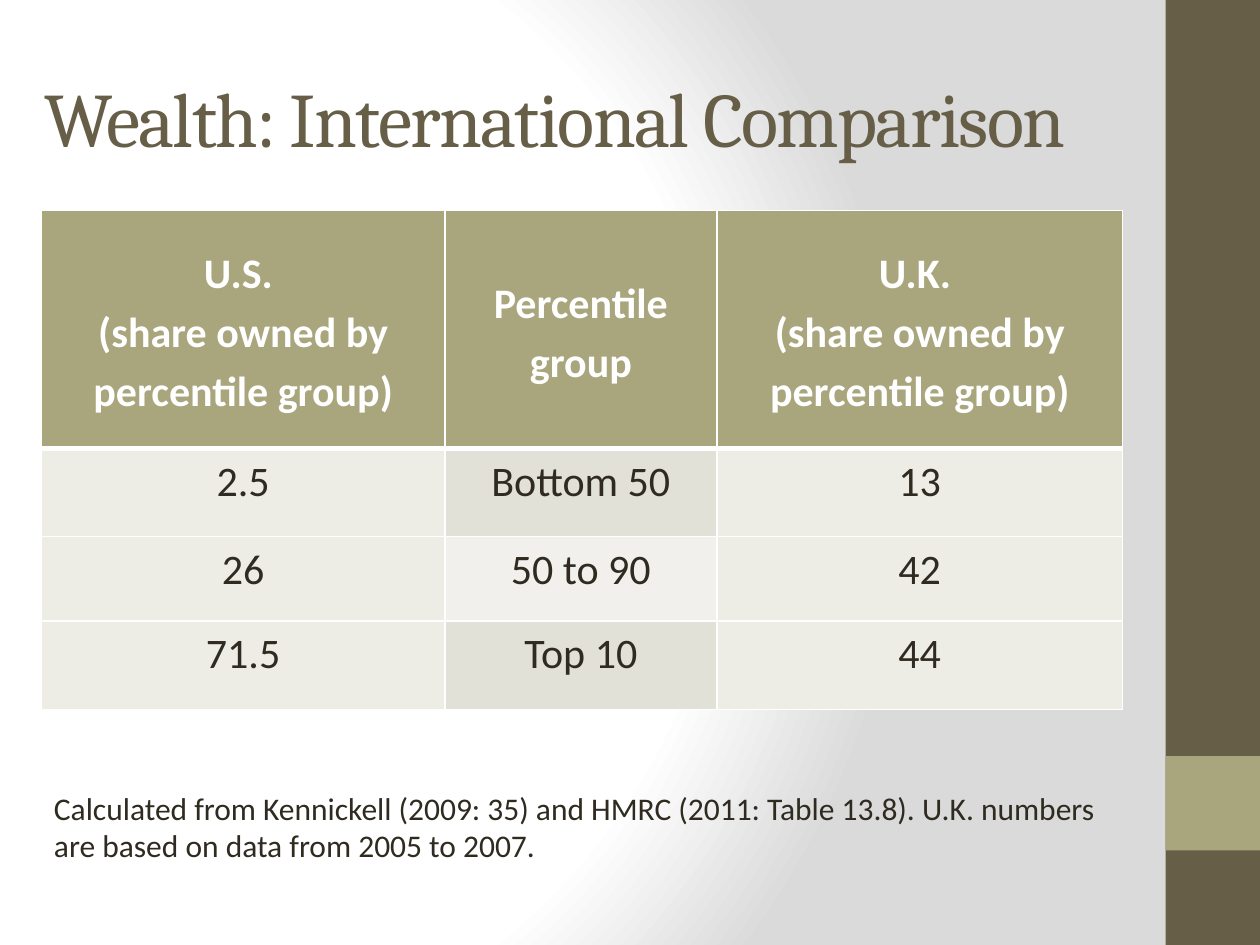
from dataclasses import dataclass

from lxml import etree
from pptx import Presentation
from pptx.dml.color import RGBColor
from pptx.enum.shapes import MSO_SHAPE
from pptx.enum.text import MSO_ANCHOR, PP_ALIGN
from pptx.oxml import parse_xml
from pptx.oxml.ns import nsdecls, qn
from pptx.util import Inches, Pt

RECTANGLE = MSO_SHAPE.RECTANGLE
TOP, MIDDLE = MSO_ANCHOR.TOP, MSO_ANCHOR.MIDDLE
LEFT, CENTER = PP_ALIGN.LEFT, PP_ALIGN.CENTER
TITLE_ONLY = 5


@dataclass(frozen=True)
class Theme:
    """Colours, fonts and type sizes of the slide."""
    brown: str = "675E47"
    olive: str = "A9A57C"
    ink: str = "2F2B20"
    white: str = "FFFFFF"
    grey: str = "DADADA"
    outer_cell: str = "EEEDE5"
    dark_band: str = "E2E1D7"
    light_band: str = "F1F0EC"
    heading_font: str = "Cambria"
    body_font: str = "Calibri"
    title_size: int = 44
    table_size: int = 24
    note_size: int = 18


class SlideBuilder:
    """Adds styled elements to the current slide."""

    def __init__(self, slide, theme):
        self.slide = slide
        self.theme = theme

    def style(self, para, size, color, font=None, bold=False, align=LEFT):
        para.alignment = align
        para.font.name = font or self.theme.body_font
        para.font.size = Pt(size)
        para.font.bold = bold
        para.font.color.rgb = RGBColor.from_string(color)

    def background(self):
        stops = ((0, self.theme.white), (75, self.theme.white), (100, self.theme.grey))
        stop_xml = "".join(
            f'<a:gs pos="{position * 1000}"><a:srgbClr val="{color}"/></a:gs>'
            for position, color in stops)
        self.slide.element.cSld.insert(0, parse_xml(
            f'<p:bg {nsdecls("p", "a")}><p:bgPr><a:gradFill rotWithShape="1">'
            f'<a:gsLst>{stop_xml}</a:gsLst><a:path path="circle">'
            '<a:fillToRect l="20000" t="50000" r="100000" b="50000"/></a:path>'
            '</a:gradFill><a:effectLst/></p:bgPr></p:bg>'))

    def bar(self, left, top, width, height, color):
        shape = self.slide.shapes.add_shape(
            RECTANGLE, Inches(left), Inches(top), Inches(width), Inches(height))
        shape.shadow.inherit = False
        shape.fill.solid()
        shape.fill.fore_color.rgb = RGBColor.from_string(color)
        shape.line.fill.background()

    def title(self, text, left, top, width, height):
        box = self.slide.shapes.title
        box.left, box.top = Inches(left), Inches(top)
        box.width, box.height = Inches(width), Inches(height)
        frame = box.text_frame
        frame.text = text
        frame.vertical_anchor = MIDDLE
        para = frame.paragraphs[0]
        self.style(para, self.theme.title_size, self.theme.brown, self.theme.heading_font)
        para.runs[0].font._element.set("spc", "-100")

    def border(self, cell, **widths):
        properties = cell._tc.get_or_add_tcPr()
        for index, side in enumerate("LRTB"):
            line = etree.Element(qn(f"a:ln{side}"), w=str(Pt(widths.get(side, 1))))
            fill = etree.SubElement(line, qn("a:solidFill"))
            etree.SubElement(fill, qn("a:srgbClr"), val=self.theme.white)
            properties.insert(index, line)

    def cell(self, cell, text, fill, color, bold, anchor):
        cell.fill.solid()
        cell.fill.fore_color.rgb = RGBColor.from_string(fill)
        cell.margin_left = cell.margin_right = Inches(0.07)
        cell.margin_top = cell.margin_bottom = 0
        cell.vertical_anchor = anchor
        cell.text_frame.text = text
        for para in cell.text_frame.paragraphs:
            self.style(para, self.theme.table_size, color, bold=bold, align=CENTER)
            para.line_spacing = 1.15

    def table(self, rows, left, top, widths, heights):
        theme = self.theme
        table = self.slide.shapes.add_table(
            len(rows), len(widths), Inches(left), Inches(top),
            Inches(sum(widths)), Inches(sum(heights))).table
        for column, width in zip(table.columns, widths):
            column.width = Inches(width)
        for row, height in zip(table.rows, heights):
            row.height = Inches(height)
        for r, texts in enumerate(rows):
            band = theme.dark_band if r % 2 else theme.light_band
            for c, text in enumerate(texts):
                cell = table.cell(r, c)
                if r == 0:
                    self.cell(cell, text, theme.olive, theme.white, True, MIDDLE)
                    self.border(cell, B=3)
                else:
                    fill = band if c == 1 else theme.outer_cell
                    self.cell(cell, text, fill, theme.ink, False, TOP)
                    self.border(cell, T=3 if r == 1 else 1)

    def note(self, text, left, top, width, height):
        box = self.slide.shapes.add_textbox(
            Inches(left), Inches(top), Inches(width), Inches(height))
        box.text_frame.word_wrap = True
        box.text_frame.text = text
        self.style(box.text_frame.paragraphs[0], self.theme.note_size, self.theme.ink)


def main():
    deck = Presentation()
    deck.slide_width, deck.slide_height = Inches(10), Inches(7.5)
    theme = Theme()
    page = SlideBuilder(deck.slides.add_slide(deck.slide_layouts[TITLE_ONLY]), theme)
    page.background()
    page.bar(9.25, 0, 0.75, 7.5, theme.brown)
    page.bar(9.25, 6, 0.75, 0.75, theme.olive)
    page.title("Wealth: International Comparison", 0.25, 0.3, 9.08, 1.25)
    share = "(share owned by percentile group)"
    page.table(
        [(f"U.S. \n{share}", "Percentile group", f"U.K. \n{share}"),
         ("2.5", "Bottom 50", "13"),
         ("26", "50 to 90", "42"),
         ("71.5", "Top 10", "44")],
        0.33, 1.67, widths=(3.2, 2.16, 3.22), heights=(1.89, 0.7, 0.67, 0.7))
    page.note(
        "Calculated from Kennickell (2009: 35) and HMRC (2011: Table 13.8). "
        "U.K. numbers are based on data from 2005 to 2007.", 0.33, 6.21, 8.83, 0.71)
    deck.save("out.pptx")


if __name__ == "__main__":
    main()
